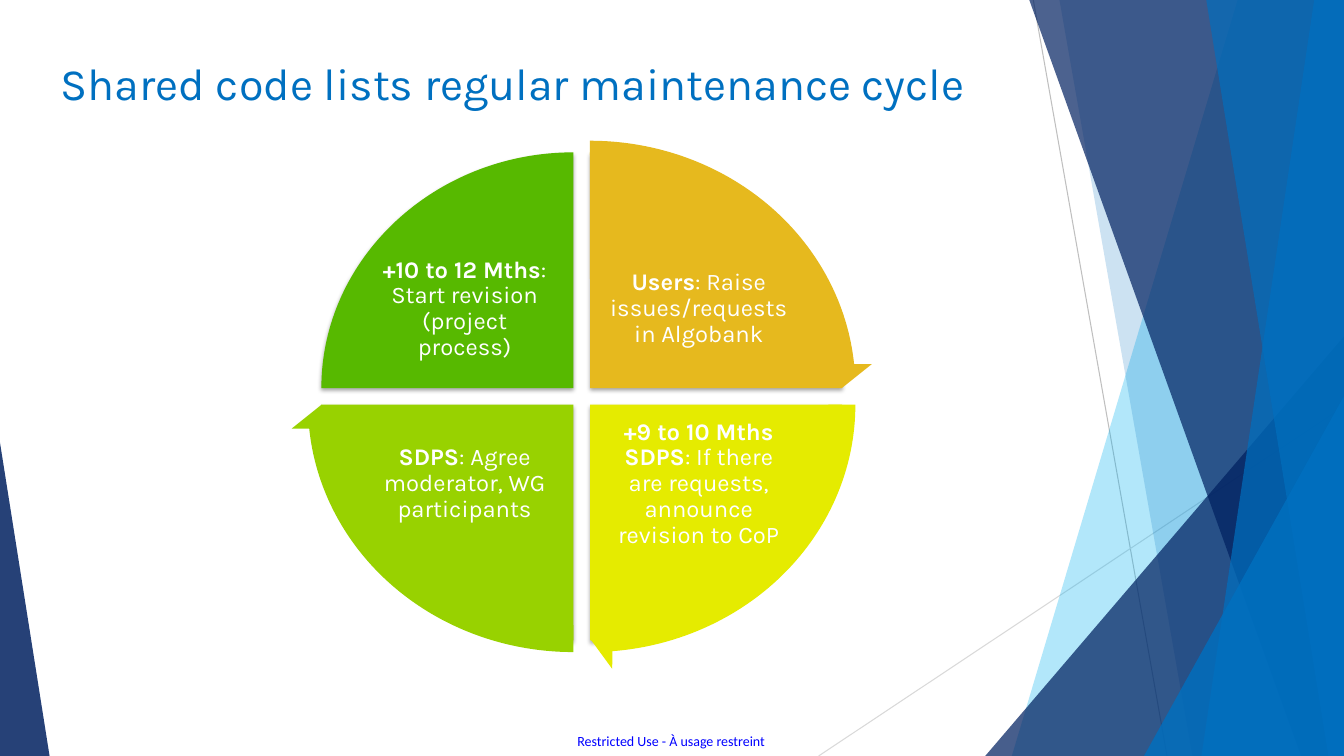
"""Build the slide on the regular maintenance cycle of shared code lists."""
from dataclasses import dataclass
from math import cos, radians, sin

from pptx import Presentation
from pptx.dml.color import RGBColor
from pptx.enum import shapes as kinds, text as txt
from pptx.oxml import ns, parse_xml
from pptx.util import Cm, Pt

WIDTH, HEIGHT = 33.87, 19.05


@dataclass(frozen=True)
class Theme:
    heading_font: str = "Karla"
    marking_font: str = "Calibri"
    title_size: int = 32
    stage_size: int = 17
    marking_size: int = 10
    navy: str = "002060"
    blue: str = "0070C0"
    sky: str = "00B0F0"
    marking: str = "0000FF"
    white: str = "FFFFFF"
    gold: str = "E6B91E"
    yellow: str = "E5EB00"
    lime: str = "98D200"
    green: str = "57B900"


THEME = Theme()


@dataclass(frozen=True)
class Ray:
    start: tuple[float, float]
    end: tuple[float, float]
    color: str


@dataclass(frozen=True)
class Band:
    """A facet from its slanted left edge to the right side of the slide."""
    top_x: float
    bottom_x: float
    color: str
    opacity: int


@dataclass(frozen=True)
class Wedge:
    """A right-angled triangle standing on the bottom edge."""
    left: float
    top: float
    width: float
    apex: float
    color: str
    opacity: int


@dataclass(frozen=True)
class Stage:
    """A quarter of the cycle, clockwise from its start angle."""
    start: int
    lead: str
    detail: str
    color: str
    has_arrow: bool = True


RAYS = (
    Ray((26.04, 0), (29.41, HEIGHT), "BFBFBF"),
    Ray((WIDTH, 10.24), (20.63, HEIGHT), "D9D9D9"),
)
FACETS = (
    Band(31.19, 25.5, THEME.sky, 30),
    Band(26.7, 30.05, THEME.blue, 20),
    Wedge(24.83, 8.48, 9.04, 1, THEME.navy, 72),
    Band(25.94, 32.79, THEME.navy, 70),
    Band(33.12, 30.28, THEME.blue, 70),
    Band(30.4, 33.48, THEME.blue, 65),
    Wedge(28.83, 9.98, 5.04, 1, THEME.blue, 80),
    Wedge(0, 11.15, 1.25, 0, THEME.navy, 85),
)
STAGES = (
    Stage(270, "Users", ": Raise issues/requests in Algobank", THEME.gold),
    Stage(0, "+9 to 10 Mths SDPS",
          ": If there are requests, announce revision to CoP", THEME.yellow),
    Stage(90, "SDPS", ": Agree moderator, WG participants", THEME.lime),
    Stage(180, "+10 to 12 Mths", ": Start revision (project process)",
          THEME.green, has_arrow=False),
)
CENTER_X, CENTER_Y, HALF_GAP = 14.66, 9.99, 0.21
RADIUS_X, RADIUS_Y = 6.35, 5.94
ARROW_WIDTH, ARROW_HEIGHT = 14.27, 13.36
ARC_HANDLE = 0.55


def paint(shape, color: str, opacity: int = 100) -> None:
    shape.shadow.inherit = False
    shape.fill.solid()
    shape.fill.fore_color.rgb = RGBColor.from_string(color)
    shape.line.fill.background()
    if opacity < 100:
        tint = shape._element.spPr.find(".//" + ns.qn("a:srgbClr"))
        tint.append(parse_xml(
            f'<a:alpha {ns.nsdecls("a")} val="{opacity * 1000}"/>'))


def style(font, name: str, size: int, color: str) -> None:
    font.name, font.size = name, Pt(size)
    font.color.rgb = RGBColor.from_string(color)


def set_insets(frame, left: float, top: float, right: float, bottom: float) -> None:
    frame.margin_left, frame.margin_top = Cm(left), Cm(top)
    frame.margin_right, frame.margin_bottom = Cm(right), Cm(bottom)


def draw_outline(slide, points: list[tuple[float, float]]):
    corners = [(Cm(x), Cm(y)) for x, y in points]
    outline = slide.shapes.build_freeform(*corners[0])
    outline.add_line_segments(corners[1:], close=True)
    return outline.convert_to_shape()


def draw_ray(slide, ray: Ray) -> None:
    line = slide.shapes.add_connector(
        kinds.MSO_CONNECTOR.STRAIGHT, *map(Cm, ray.start + ray.end))
    line.line.color.rgb = RGBColor.from_string(ray.color)
    line.line.width = Pt(0.75)
    line._element.spPr.append(parse_xml(f'<a:effectLst {ns.nsdecls("a")}/>'))


def draw_facet(slide, facet: Band | Wedge) -> None:
    if isinstance(facet, Band):
        shape = draw_outline(slide, [(facet.top_x, 0), (WIDTH, 0),
                                     (WIDTH, HEIGHT), (facet.bottom_x, HEIGHT)])
    else:
        shape = slide.shapes.add_shape(
            kinds.MSO_SHAPE.ISOSCELES_TRIANGLE, Cm(facet.left), Cm(facet.top),
            Cm(facet.width), Cm(HEIGHT - facet.top))
        shape.adjustments[0] = facet.apex
    paint(shape, facet.color, facet.opacity)


def stage_hub(stage: Stage) -> tuple[float, float, bool, bool]:
    middle = radians(stage.start + 45)
    on_right, on_bottom = cos(middle) > 0, sin(middle) > 0
    return (CENTER_X + (HALF_GAP if on_right else -HALF_GAP),
            CENTER_Y + (HALF_GAP if on_bottom else -HALF_GAP), on_right, on_bottom)


def curve_quarter(quarter, start: int) -> None:
    """Trim the full box to one quarter of its ellipse."""
    (x0, y0), (x1, y1) = [(cos(radians(a)), sin(radians(a))) for a in (start, start + 90)]

    def point(x: float, y: float) -> str:
        return f'<a:pt x="{Cm(RADIUS_X * (1 + x))}" y="{Cm(RADIUS_Y * (1 + y))}"/>'

    handles = (point(x0 + ARC_HANDLE * x1, y0 + ARC_HANDLE * y1)
               + point(x1 + ARC_HANDLE * x0, y1 + ARC_HANDLE * y0))
    trace = quarter._element.spPr.find(".//" + ns.qn("a:path"))
    for step in list(trace):
        trace.remove(step)
    trace.extend(parse_xml(
        f'<a:path {ns.nsdecls("a")}><a:moveTo>{point(x0, y0)}</a:moveTo>'
        f'<a:cubicBezTo>{handles}{point(x1, y1)}</a:cubicBezTo>'
        f'<a:lnTo>{point(0, 0)}</a:lnTo><a:close/></a:path>'))


def draw_stage(slide, stage: Stage) -> None:
    hub_x, hub_y, on_right, on_bottom = stage_hub(stage)
    quarter = draw_outline(slide, [
        (hub_x + RADIUS_X * x, hub_y + RADIUS_Y * y)
        for x, y in ((-1, -1), (1, -1), (1, 1), (-1, 1))])
    curve_quarter(quarter, stage.start)
    paint(quarter, stage.color)
    quarter._element.spPr.find(ns.qn("a:effectLst")).append(parse_xml(
        f'<a:outerShdw {ns.nsdecls("a")} blurRad="40000" dist="23000" dir="5400000" '
        'rotWithShape="0"><a:srgbClr val="000000"><a:alpha val="35000"/>'
        '</a:srgbClr></a:outerShdw>'))

    frame = quarter.text_frame
    frame.word_wrap = True
    frame.vertical_anchor = txt.MSO_ANCHOR.MIDDLE
    left, right = (6.83, 1.35) if on_right else (1.35, 6.83)
    top, bottom = (6.68, 2.69) if on_bottom else (2.69, 6.68)
    set_insets(frame, left, top, right, bottom)
    label = frame.paragraphs[0]
    label.alignment = txt.PP_ALIGN.CENTER
    label.line_spacing = 0.9
    for words, bold in ((stage.lead, True), (stage.detail, False)):
        run = label.add_run()
        run.text = words
        style(run.font, THEME.heading_font, THEME.stage_size, THEME.white)
        run.font.bold = bold


def draw_arrow(slide, stage: Stage) -> None:
    hub_x, hub_y, _, _ = stage_hub(stage)
    arrow = slide.shapes.add_shape(
        kinds.MSO_SHAPE.CIRCULAR_ARROW, Cm(hub_x - ARROW_WIDTH / 2),
        Cm(hub_y - ARROW_HEIGHT / 2), Cm(ARROW_WIDTH), Cm(ARROW_HEIGHT))
    settings = (0.051, 3.275, (stage.start + 84.54) * 0.6, stage.start * 0.6, 0.059)
    for index, value in enumerate(settings):
        arrow.adjustments[index] = value
    paint(arrow, stage.color)


def write_title(slide, words: str) -> None:
    title = slide.shapes.title
    title.left, title.top, title.width, title.height = map(Cm, (1.28, 1.27, 25.76, 3.66))
    frame = title.text_frame
    frame.text = words
    frame.word_wrap = True
    frame.auto_size = txt.MSO_AUTO_SIZE.NONE
    frame.vertical_anchor = txt.MSO_ANCHOR.TOP
    frame.paragraphs[0].alignment = txt.PP_ALIGN.LEFT
    style(frame.paragraphs[0].font, THEME.heading_font, THEME.title_size, THEME.blue)


def write_marking(slide, words: str) -> None:
    frame = slide.shapes.add_textbox(Cm(14.55), Cm(18.45), Cm(4.85), Cm(0.43)).text_frame
    set_insets(frame, 0, 0, 0, 0)
    frame.word_wrap = True
    frame.auto_size = txt.MSO_AUTO_SIZE.SHAPE_TO_FIT_TEXT
    frame.text = words
    style(frame.paragraphs[0].font, THEME.marking_font, THEME.marking_size, THEME.marking)


def main() -> None:
    deck = Presentation()
    deck.slide_width, deck.slide_height = Cm(WIDTH), Cm(HEIGHT)
    slide = deck.slides.add_slide(deck.slide_layouts.get_by_name("Title Only"))
    for ray in RAYS:
        draw_ray(slide, ray)
    for facet in FACETS:
        draw_facet(slide, facet)
    write_marking(slide, "Restricted Use - À usage restreint")
    write_title(slide, "Shared code lists regular maintenance cycle")
    for stage in STAGES:
        draw_stage(slide, stage)
    for stage in filter(lambda entry: entry.has_arrow, STAGES):
        draw_arrow(slide, stage)
    deck.save("out.pptx")


if __name__ == "__main__":
    main()
